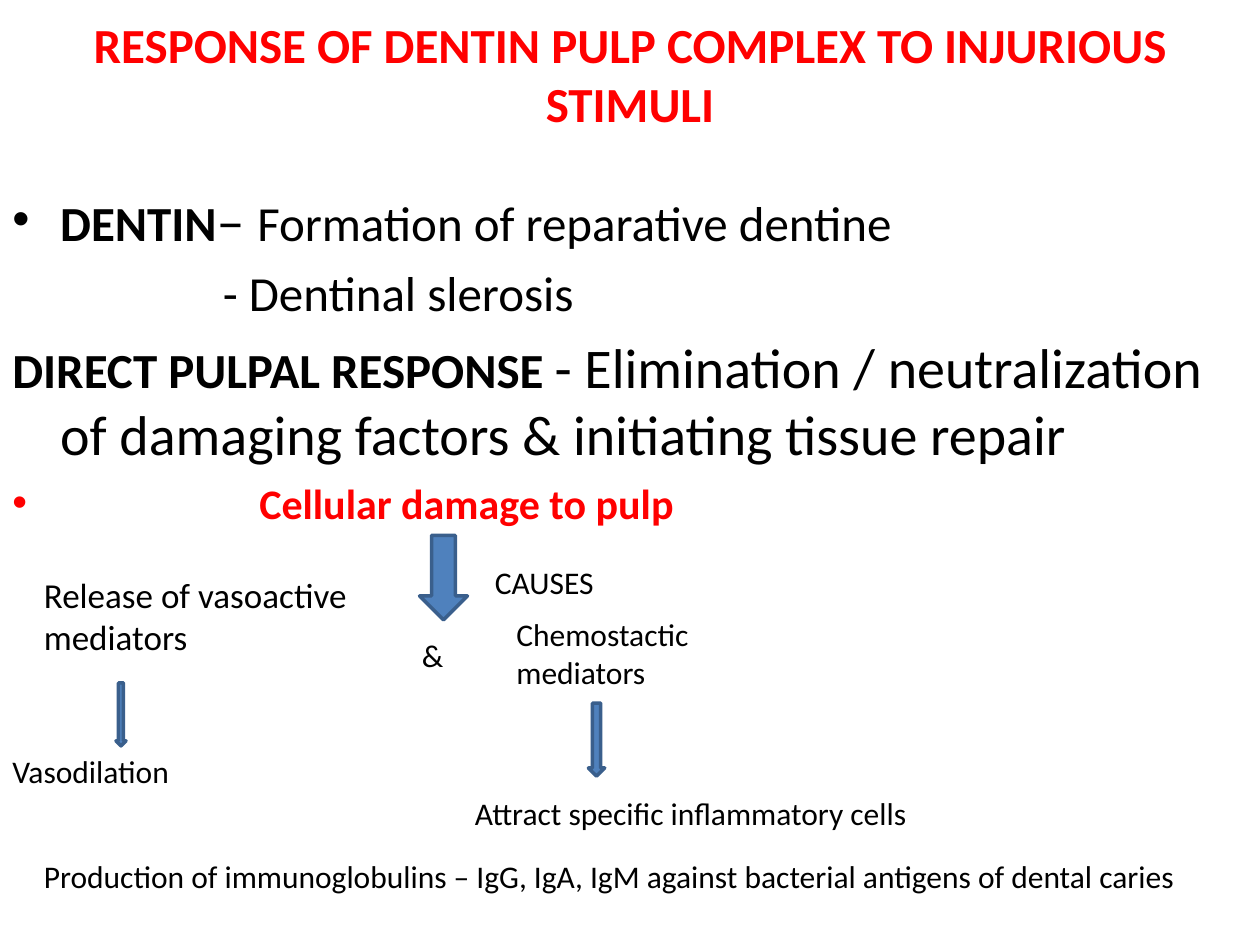
from lxml import etree
from pptx import Presentation
from pptx import util as u
from pptx.dml import color
from pptx.enum import shapes, text
from pptx.oxml import ns

COLOURS = {"ink": "000000", "accent": "FF0000", "arrow": "4F81BD", "edge": "3A5F8C"}


def rgb(name):
    return color.RGBColor.from_string(COLOURS[name])


class SlideWriter:
    face = "Calibri"

    def __init__(self, deck):
        self.page = deck.slides.add_slide(deck.slide_layouts[5])

    def place(self, shape, area):
        for name, value in zip(("left", "top", "width", "height"), area):
            setattr(shape, name, u.Inches(value))

    def add_span(self, para, words, size, bold=False, colour="ink"):
        span = para.add_run()
        span.text = words
        formats = {"name": self.face, "size": u.Pt(size), "bold": bold}
        for name, value in formats.items():
            setattr(span.font, name, value)
        span.font.color.rgb = rgb(colour)

    def title(self, words, area):
        box = self.page.shapes.title
        self.place(box, area)
        formats = {
            "word_wrap": True,
            "auto_size": text.MSO_AUTO_SIZE.NONE,
            "vertical_anchor": text.MSO_ANCHOR.MIDDLE,
        }
        for name, value in formats.items():
            setattr(box.text_frame, name, value)
        para = box.text_frame.paragraphs[0]
        para.alignment = text.PP_ALIGN.CENTER
        self.add_span(para, words, 28, True, "accent")

    def text_box(self, area):
        box = self.page.shapes.add_textbox(*map(u.Inches, area))
        box.text_frame.word_wrap = True
        return box.text_frame

    def label(self, words, area, size=18):
        self.add_span(self.text_box(area).paragraphs[0], words, size)

    def body(self, items, area):
        frame = self.text_box(area)
        for index, (margin, indent, bullet, spans) in enumerate(items):
            para = frame.add_paragraph() if index else frame.paragraphs[0]
            properties = para._p.get_or_add_pPr()
            properties.set("marL", str(u.Inches(margin)))
            properties.set("indent", str(u.Inches(indent)))
            if bullet:
                font = etree.SubElement(properties, ns.qn("a:buFont"))
                font.set("typeface", "Arial")
                mark = etree.SubElement(properties, ns.qn("a:buChar"))
                mark.set("char", "•")
            if index:
                para.space_before = u.Pt(6)
            for span in spans:
                self.add_span(para, *span)

    def down_arrow(self, area):
        arrow = self.page.shapes.add_shape(
            shapes.MSO_SHAPE.DOWN_ARROW, *map(u.Inches, area)
        )
        arrow.shadow.inherit = False
        arrow.fill.solid()
        arrow.fill.fore_color.rgb = rgb("arrow")
        arrow.line.color.rgb = rgb("edge")
        arrow.line.width = u.Pt(2)


BODY = [
    (0.38, -0.38, True, [
        ("DENTIN", 28, True),
        ("– ", 32),
        ("Formation of reparative dentine", 28),
    ]),
    (1.67, 0, False, [("- Dentinal slerosis", 28)]),
    (0.38, -0.38, False, [
        ("DIRECT PULPAL RESPONSE ", 28, True),
        ("- Elimination / neutralization of damaging factors "
         "& initiating tissue repair", 32),
    ]),
    (1.96, -1.96, True, [("Cellular damage to pulp", 24, True, "accent")]),
]

ARROWS = [
    (3.33, 4.25, 0.38, 0.67),
    (0.92, 5.42, 0.08, 0.5),
    (4.67, 5.58, 0.13, 0.58),
]

LABELS = [
    ("CAUSES", (3.83, 4.42, 2, 0.4)),
    ("Release of vasoactive mediators", (0.25, 4.5, 3.33, 0.77), 20),
    ("&", (3.25, 5, 0.75, 0.4)),
    ("Chemostactic mediators", (4, 4.83, 2.25, 0.71)),
    ("Vasodilation", (0, 5.92, 2, 0.4)),
    ("Attract specific inflammatory cells", (3.67, 6.25, 5.75, 0.4)),
    ("Production of immunoglobulins – IgG, IgA, IgM against bacterial antigens "
     "of dental caries", (0.25, 6.75, 9.5, 0.4)),
]


def main():
    deck = Presentation()
    deck.slide_width = u.Inches(10)
    deck.slide_height = u.Inches(7.5)
    writer = SlideWriter(deck)
    writer.title(
        "RESPONSE OF DENTIN PULP COMPLEX TO INJURIOUS STIMULI", (0, 0, 10, 1.17)
    )
    writer.body(BODY, (0, 1.42, 10, 5.28))
    for area in ARROWS:
        writer.down_arrow(area)
    for label in LABELS:
        writer.label(*label)
    deck.save("out.pptx")


if __name__ == "__main__":
    main()
